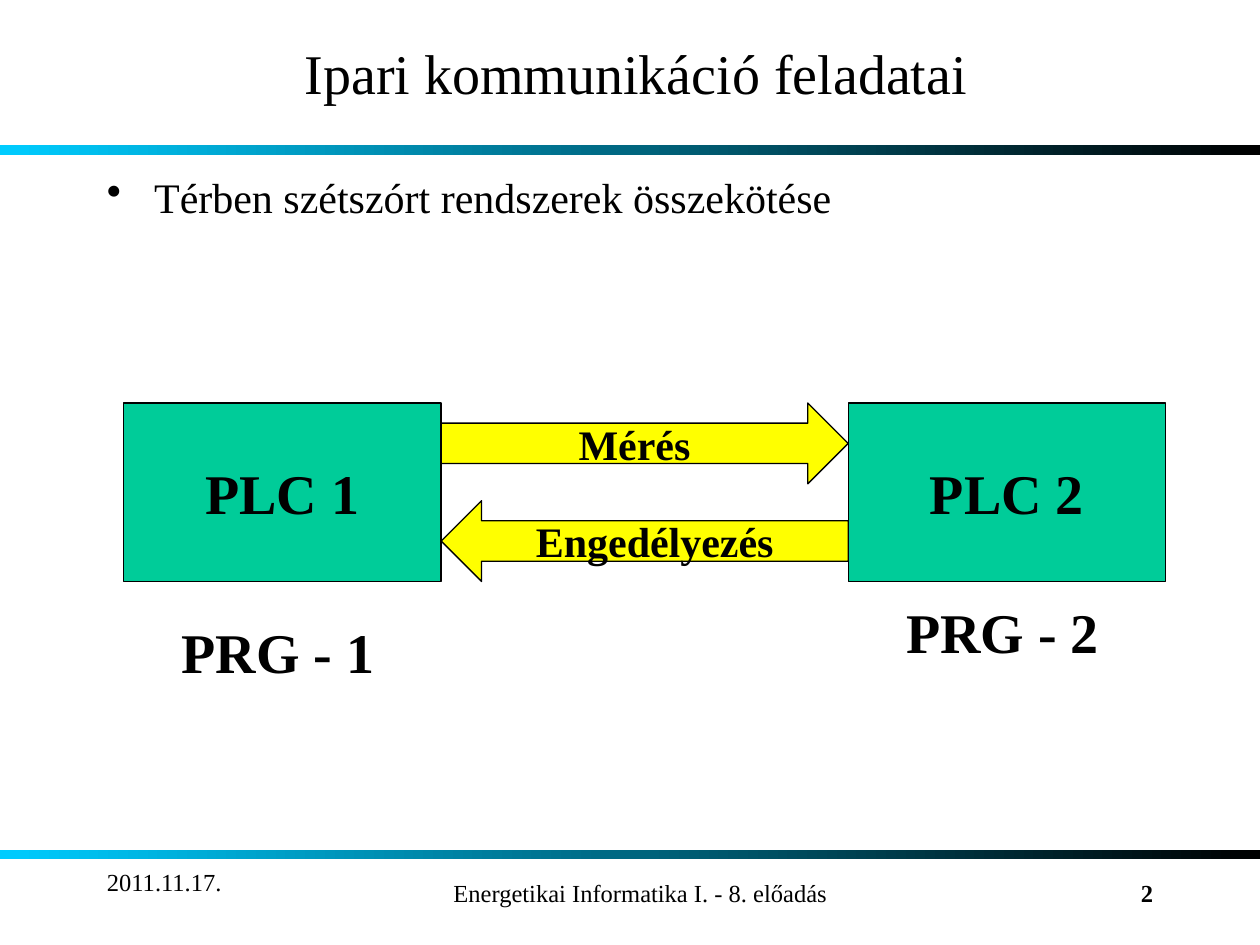
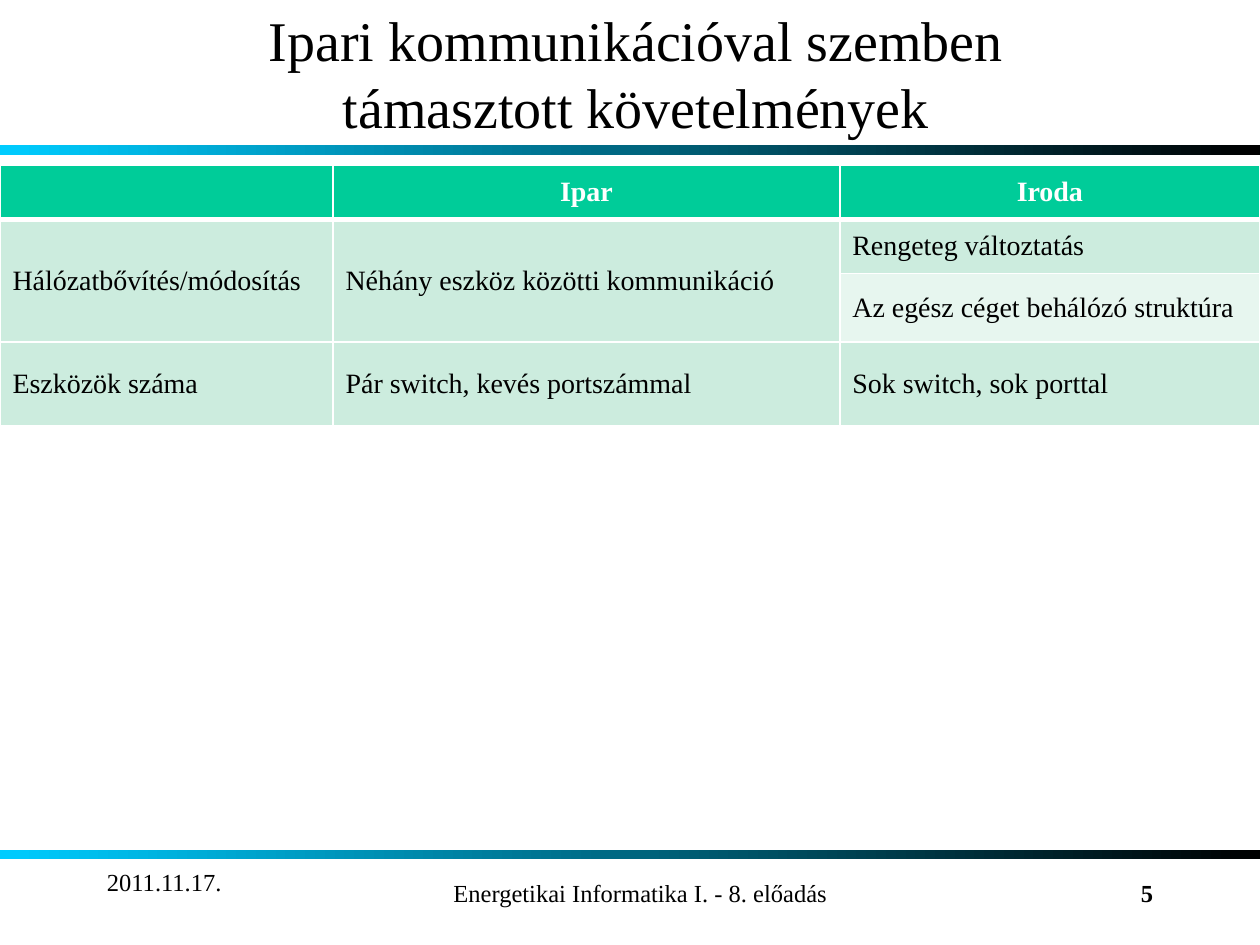
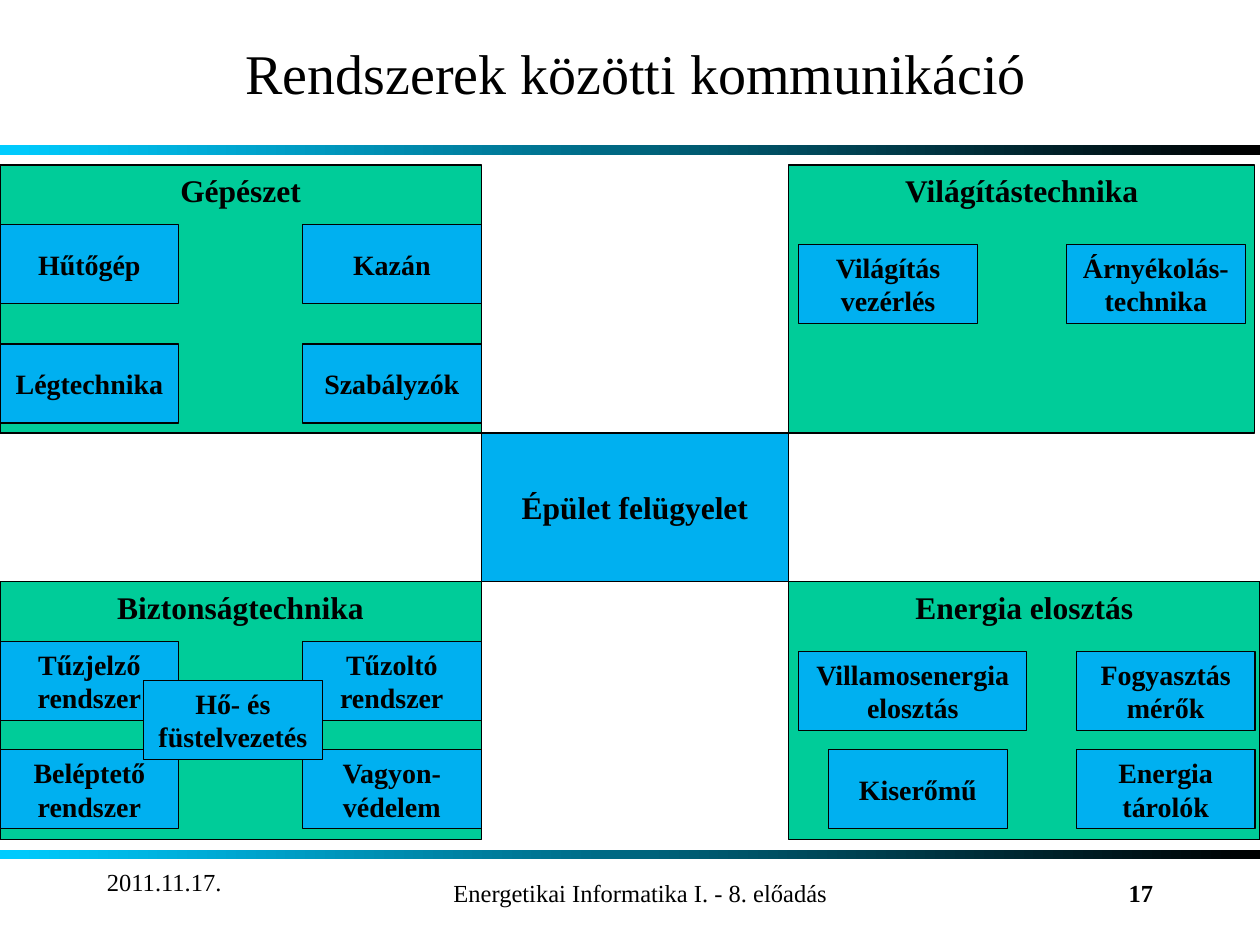
from lxml.etree import SubElement
from pptx import Presentation
from pptx.dml.color import RGBColor
from pptx.enum.shapes import MSO_SHAPE as Preset
from pptx.enum.text import MSO_ANCHOR as Anchor, PP_ALIGN as Align
from pptx.oxml.ns import qn
from pptx.util import Pt

WIDTH, HEIGHT = 720, 540
BODY_TOP = 94.3
FONT_NAME = "Times New Roman"
BLACK, WHITE, GREEN, BLUE, YELLOW = "000000", "FFFFFF", "00CC99", "00B0F0", "FFFF00"
CYAN, MINT, PALE_MINT = "00CCFF", "CCECDE", "E7F6EF"
UNIT_WIDTH, UNIT_HEIGHT = 102.2, 45.2


def color(value):
    return RGBColor.from_string(value)


def lengths(box):
    return [Pt(value) for value in box]


def write(frame, text, size, bold=False, align=Align.CENTER, anchor=Anchor.TOP,
          font_color=BLACK):
    frame.word_wrap = True
    frame.vertical_anchor = anchor
    paragraph = frame.paragraphs[0]
    paragraph.text = text
    paragraph.alignment = align
    font = paragraph.font
    font.name, font.size, font.bold = FONT_NAME, Pt(size), bold
    font.color.rgb = color(font_color)


def add_text(slide, box, text, size, **style):
    shape = slide.shapes.add_textbox(*lengths(box))
    write(shape.text_frame, text, size, **style)


def add_block(slide, box, text, size, fill, preset=Preset.RECTANGLE, anchor=Anchor.MIDDLE):
    shape = slide.shapes.add_shape(preset, *lengths(box))
    shape.shadow.inherit = False
    shape.fill.solid()
    shape.fill.fore_color.rgb = color(fill)
    shape.line.color.rgb = color(BLACK)
    shape.line.width = Pt(0.75)
    write(shape.text_frame, text, size, bold=True, anchor=anchor)


def add_band(slide, top):
    band = slide.shapes.add_shape(Preset.RECTANGLE, *lengths((0, top, WIDTH, 5.6)))
    band.shadow.inherit = False
    band.line.fill.background()
    band.fill.gradient()
    band.fill.gradient_angle = 0
    for stop, value in zip(band.fill.gradient_stops, (CYAN, BLACK)):
        stop.color.rgb = color(value)


def add_framed_slide(presentation, title, number):
    slide = presentation.slides.add_slide(presentation.slide_layouts[6])
    for top in (82.8, 485.5):
        add_band(slide, top)
    add_text(slide, (93.6, 20.4, 540, 41.8), title, 32, anchor=Anchor.MIDDLE)
    add_text(slide, (54, 491.8, 150, 36), "2011.11.17.", 14, align=Align.LEFT)
    add_text(slide, (150, 498.2, 432, 30), "Energetikai Informatika I. - 8. előadás", 14)
    add_text(slide, (516, 498.2, 150, 30), str(number), 14, bold=True, align=Align.RIGHT)
    return slide


def add_bullet(slide, box, text):
    frame = slide.shapes.add_textbox(*lengths(box)).text_frame
    properties = frame.paragraphs[0]._p.get_or_add_pPr()
    properties.set("marL", str(Pt(27)))
    properties.set("indent", str(-Pt(27)))
    SubElement(properties, qn("a:buChar")).set("char", "•")
    write(frame, text, 24, align=Align.LEFT)


def add_plc_diagram(slide, box):
    left, top, width, height = box
    plc_width, arrow_height = 181.4, 46.2
    arrow_left, arrow_width = left + plc_width, width - 2 * plc_width
    controllers = ((1, left, 16.8), (2, left + width - plc_width, 5.3))
    for number, plc_left, label_gap in controllers:
        add_block(slide, (plc_left, top, plc_width, height), f"PLC {number}", 32, GREEN)
        add_text(slide, (plc_left + 11.5, top + height + label_gap, 153.4, 46),
                 f"PRG - {number}", 32, bold=True)
    arrows = (("Mérés", top, Preset.RIGHT_ARROW),
              ("Engedélyezés", top + height - arrow_height, Preset.LEFT_ARROW))
    for text, arrow_top, preset in arrows:
        add_block(slide, (arrow_left, arrow_top, arrow_width, arrow_height),
                  text, 24, YELLOW, preset)


def set_borders(cell, top_width, bottom_width):
    properties = cell._tc.get_or_add_tcPr()
    for side, width in (("L", 1), ("R", 1), ("T", top_width), ("B", bottom_width)):
        line = SubElement(properties, qn(f"a:ln{side}"), w=str(Pt(width)))
        fill = SubElement(line, qn("a:solidFill"))
        SubElement(fill, qn("a:srgbClr"), val=WHITE)


def add_requirements_table(slide, box):
    rows = (
        (31, GREEN, Align.CENTER, ("", "Ipar", "Iroda")),
        (31, MINT, Align.JUSTIFY, ("Hálózatbővítés/módosítás",
                                   "Néhány eszköz közötti kommunikáció",
                                   "Rengeteg változtatás")),
        (39.2, PALE_MINT, Align.JUSTIFY, ("", "", "Az egész céget behálózó struktúra")),
        (48, MINT, Align.LEFT, ("Eszközök száma", "Pár switch, kevés portszámmal",
                                "Sok switch, sok porttal")),
    )
    table = slide.shapes.add_table(len(rows), 3, *lengths(box)).table
    for column, width in zip(table.columns, (190.3, 289.6, 240.1)):
        column.width = Pt(width)
    for index, (height, fill, align, texts) in enumerate(rows):
        header = index == 0
        table.rows[index].height = Pt(height)
        for cell, text in zip(table.rows[index].cells, texts):
            set_borders(cell, 3 if index == 1 else 1, 3 if header else 1)
            cell.fill.solid()
            cell.fill.fore_color.rgb = color(fill)
            cell.vertical_anchor = Anchor.MIDDLE
            if text:
                write(cell.text_frame, text, 16, bold=header, align=align,
                      anchor=Anchor.MIDDLE, font_color=WHITE if header else BLACK)
    for column in (0, 1):
        table.cell(1, column).merge(table.cell(2, column))


def add_system(slide, box, heading, units):
    left, top = box[:2]
    add_block(slide, box, heading, 18, GREEN, anchor=Anchor.TOP)
    for text, x, y, width in units:
        add_block(slide, (left + x, top + y, width, UNIT_HEIGHT), text, 16, BLUE)


def unit_grid(texts, columns, rows):
    places = [(x, y) for y in rows for x in columns]
    return [(text, x, y, UNIT_WIDTH) for text, (x, y) in zip(texts, places)]


def add_building_map(slide, box):
    left, top, width, height = box
    hub_left, hub_top, hub_width, hub_height = left + 275, top + 153.1, 175.7, 85
    right, lower = hub_left + hub_width, hub_top + hub_height
    upper_height, lower_height = hub_top - top, top + height - lower
    wide_columns = (0, 275 - UNIT_WIDTH)

    add_system(slide, (left, top, 275, upper_height), "Gépészet",
               unit_grid(("Hűtőgép", "Kazán", "Légtechnika", "Szabályzók"),
                         wide_columns, (34, 102.2)))
    add_system(slide, (right, top, 266.4, upper_height), "Világítástechnika",
               unit_grid(("Világítás vezérlés", "Árnyékolás-technika"),
                         (5.7, 158.7), (45.3,)))
    add_system(slide, (left, lower, 275, lower_height), "Biztonságtechnika",
               unit_grid(("Tűzjelző rendszer", "Tűzoltó rendszer",
                          "Beléptető rendszer", "Vagyon-védelem"),
                         wide_columns, (34, 96))
               + [("Hő- és füstelvezetés", 82, 56.4, UNIT_WIDTH)])
    add_system(slide, (right, lower, left + width - right, lower_height), "Energia elosztás",
               [("Villamosenergia elosztás", 5.7, 39.7, 130.4),
                ("Kiserőmű", 22.7, 96, UNIT_WIDTH)]
               + unit_grid(("Fogyasztás\vmérők", "Energia tárolók"), (164.3,), (39.7, 96)))
    add_block(slide, (hub_left, hub_top, hub_width, hub_height), "Épület felügyelet", 18, BLUE)


def main():
    presentation = Presentation()
    presentation.slide_width, presentation.slide_height = Pt(WIDTH), Pt(HEIGHT)

    slide = add_framed_slide(presentation, "Ipari kommunikáció feladatai", 2)
    add_bullet(slide, (54, BODY_TOP, 612, 380), "Térben szétszórt rendszerek összekötése")
    add_plc_diagram(slide, (70.7, 230.3, 595.4, 102))

    slide = add_framed_slide(
        presentation, "Ipari kommunikációval szemben támasztott követelmények", 5)
    add_requirements_table(slide, (0, BODY_TOP, WIDTH, 149.2))

    slide = add_framed_slide(presentation, "Rendszerek közötti kommunikáció", 17)
    add_building_map(slide, (0, BODY_TOP, WIDTH, 385.6))

    presentation.save("out.pptx")


if __name__ == "__main__":
    main()
